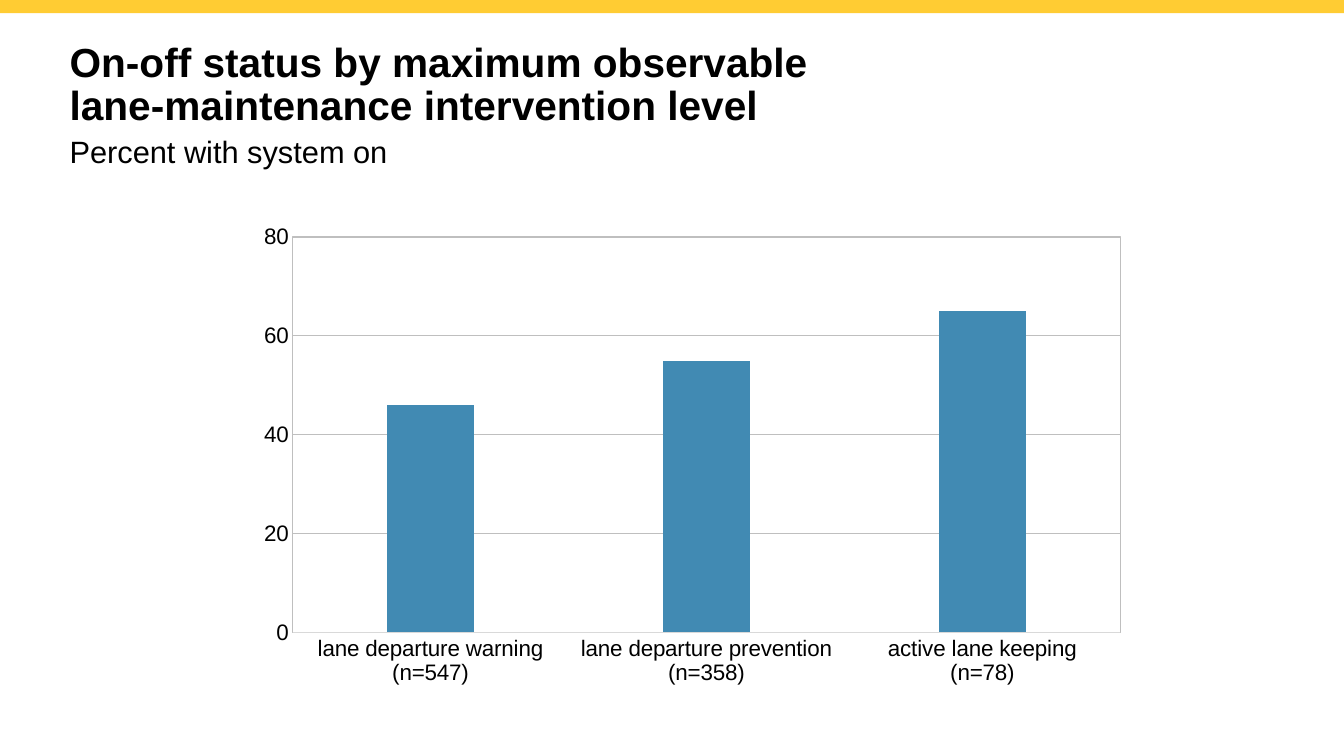
import pptx
import pptx.chart.data
import pptx.dml.color
import pptx.enum.chart
import pptx.enum.shapes
import pptx.util
from lxml import etree
from pptx.util import Inches

COLORS = {"band": "FFCC33", "text": "000000", "bar": "418AB3",
          "grid": "BFBFBF", "axis": "D9D9D9"}
FONT = "Arial"


def color(name):
    return pptx.dml.color.RGBColor.from_string(COLORS[name])


def style_font(font, size, bold=False):
    values = {"name": FONT, "size": pptx.util.Pt(size), "bold": bold}
    for key, value in values.items():
        setattr(font, key, value)
    font.color.rgb = color("text")


deck = pptx.Presentation()
deck.slide_width = Inches(13.33)
deck.slide_height = Inches(7.5)
page = deck.slides.add_slide(deck.slide_layouts[6])

# Top band
band = page.shapes.add_shape(pptx.enum.shapes.MSO_SHAPE.RECTANGLE,
                             0, 0, deck.slide_width, Inches(0.13))
band.shadow.inherit = False
band.fill.solid()
band.fill.fore_color.rgb = color("band")
band.line.fill.background()

# Title and subtitle: text, top, height, size, line spacing, bold
headings = [
    ("On-off status by maximum observable\vlane-maintenance intervention level",
     0.42, 0.86, 29, 31, True),
    ("Percent with system on", 1.34, 0.35, 22, 25, False),
]
for text, top, height, size, spacing, bold in headings:
    box = page.shapes.add_textbox(Inches(0.69), Inches(top), Inches(12.29), Inches(height))
    frame = box.text_frame
    frame.word_wrap = True
    for side in ("left", "top", "right", "bottom"):
        setattr(frame, f"margin_{side}", 0)
    para = frame.paragraphs[0]
    para.text = text
    para.line_spacing = pptx.util.Pt(spacing)
    for span in para.runs:
        style_font(span.font, size, bold)

# Column chart
data = pptx.chart.data.CategoryChartData()
data.categories = ["lane departure warning\n(n=547)",
                   "lane departure prevention\n(n=358)",
                   "active lane keeping\n(n=78)"]
data.add_series("Percent with system on", (46, 55, 65))
chart = page.shapes.add_chart(pptx.enum.chart.XL_CHART_TYPE.COLUMN_CLUSTERED,
                              Inches(2.08), Inches(1.81), Inches(9.34), Inches(5.36),
                              data).chart
chart.has_legend = False
chart.has_title = False
style_font(chart.font, 16)
plot = chart.plots[0]
plot.gap_width = 219
plot.vary_by_categories = False
bars = plot.series[0].format.fill
bars.solid()
bars.fore_color.rgb = color("bar")

# Axes and gridlines
for axis in (chart.category_axis, chart.value_axis):
    axis.major_tick_mark = pptx.enum.chart.XL_TICK_MARK.NONE
    axis.minor_tick_mark = pptx.enum.chart.XL_TICK_MARK.NONE
    style_font(axis.tick_labels.font, 16)
scale = chart.value_axis
for key, value in {"minimum_scale": 0, "maximum_scale": 80, "major_unit": 20}.items():
    setattr(scale, key, value)
scale.format.line.fill.background()
for line, name in ((chart.category_axis.format.line, "axis"),
                   (scale.major_gridlines.format.line, "grid")):
    line.color.rgb = color(name)
    line.width = pptx.util.Pt(0.75)

# Plot area position and border
C = "http://schemas.openxmlformats.org/drawingml/2006/chart"
A = "http://schemas.openxmlformats.org/drawingml/2006/main"
area = chart.element.find(f".//{{{C}}}plotArea")
for old in area.findall(f"{{{C}}}layout"):
    area.remove(old)
layout = etree.Element(f"{{{C}}}layout")
manual = etree.SubElement(layout, f"{{{C}}}manualLayout")
settings = {"layoutTarget": "inner", "xMode": "edge", "yMode": "edge",
            "x": "0.088", "y": "0.101", "w": "0.879", "h": "0.732"}
for tag, value in settings.items():
    etree.SubElement(manual, f"{{{C}}}{tag}", val=value)
area.insert(0, layout)
border = etree.SubElement(area, f"{{{C}}}spPr")
etree.SubElement(border, f"{{{A}}}noFill")
outline = etree.SubElement(border, f"{{{A}}}ln", w=str(pptx.util.Pt(0.75)))
solid = etree.SubElement(outline, f"{{{A}}}solidFill")
etree.SubElement(solid, f"{{{A}}}srgbClr", val=COLORS["grid"])

deck.save("out.pptx")
